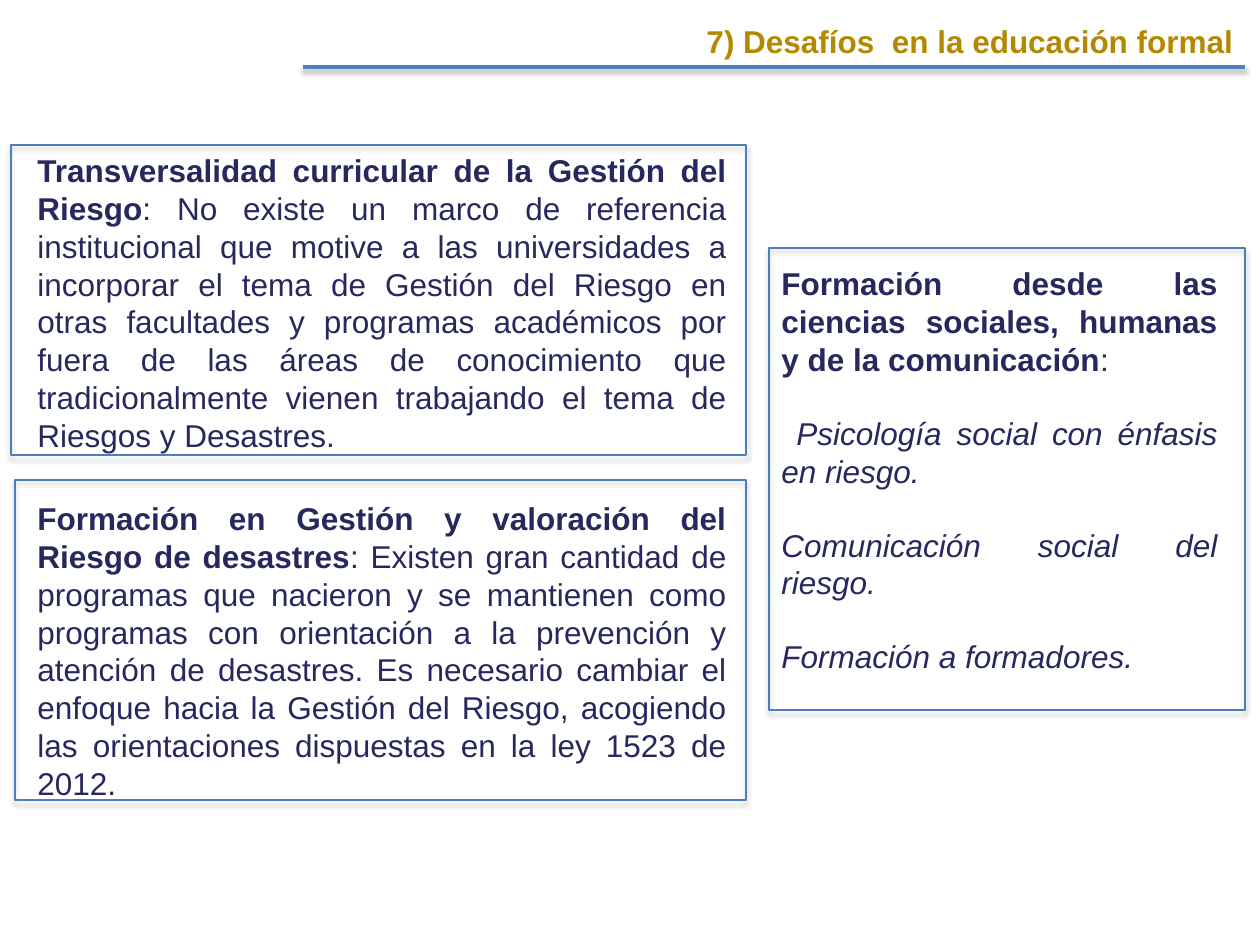
import pptx
import pptx.util
import pptx.dml.color
import pptx.enum.shapes
import pptx.enum.text
import pptx.oxml.ns
from lxml import etree

RGBColor = pptx.dml.color.RGBColor
ALIGN = pptx.enum.text.PP_ALIGN
GOLD = RGBColor(0xB4, 0x89, 0x00)
NAVY = RGBColor(0x27, 0x28, 0x5D)
FRAME_BLUE = RGBColor(0x4B, 0x7E, 0xBC)
RULE_BLUE = RGBColor(0x4F, 0x81, 0xBD)
EMU_PER_PX = 914400 / 126


def px(n):
    return pptx.util.Emu(round(n * EMU_PER_PX))


class SlideBuilder:
    font = "Arial"
    size = pptx.util.Pt(18)
    line_gap = pptx.util.Pt(20.7)  # one line of text

    def __init__(self, slide):
        self.slide = slide

    def format_run(self, r, color, bold=False, italic=False):
        r.font.name, r.font.size = self.font, self.size
        r.font.color.rgb = color
        r.font.bold, r.font.italic = bold, italic

    def add_shadow(self, sp, blur, dist, alpha):
        effects = etree.SubElement(sp._element.spPr, pptx.oxml.ns.qn("a:effectLst"))
        shadow = etree.SubElement(
            effects, pptx.oxml.ns.qn("a:outerShdw"),
            blurRad=str(pptx.util.Pt(blur)), dist=str(pptx.util.Pt(dist)),
            dir="5400000", rotWithShape="0")
        black = etree.SubElement(shadow, pptx.oxml.ns.qn("a:srgbClr"), val="000000")
        etree.SubElement(black, pptx.oxml.ns.qn("a:alpha"), val=str(alpha * 1000))

    def title(self, text, x, y, w, h):
        sp = self.slide.shapes.title
        sp.left, sp.top, sp.width, sp.height = px(x), px(y), px(w), px(h)
        tf = sp.text_frame
        tf.text = text
        tf.auto_size = pptx.enum.text.MSO_AUTO_SIZE.SHAPE_TO_FIT_TEXT
        tf.vertical_anchor = pptx.enum.text.MSO_ANCHOR.TOP
        p = tf.paragraphs[0]
        p.alignment = ALIGN.RIGHT
        self.format_run(p.runs[0], GOLD, bold=True)

    def text(self, heading, body, x, y, w, h, items=()):
        sp = self.slide.shapes.add_textbox(px(x), px(y), px(w), px(h))
        tf = sp.text_frame
        tf.word_wrap = True
        tf.auto_size = pptx.enum.text.MSO_AUTO_SIZE.SHAPE_TO_FIT_TEXT
        p = tf.paragraphs[0]
        p.text = heading
        p.alignment = ALIGN.JUSTIFY
        self.format_run(p.runs[0], NAVY, bold=True)
        r = p.add_run()
        r.text = body
        self.format_run(r, NAVY)
        for item, indent in items:
            p = tf.add_paragraph()
            p.text = item
            p.alignment = ALIGN.JUSTIFY
            p.space_before = self.line_gap
            if indent:
                p._p.get_or_add_pPr().set("indent", str(px(indent)))
            self.format_run(p.runs[0], NAVY, italic=True)

    def frame(self, x, y, w, h):
        sp = self.slide.shapes.add_shape(
            pptx.enum.shapes.MSO_SHAPE.RECTANGLE, px(x), px(y), px(w), px(h))
        sp.fill.background()
        sp.line.color.rgb = FRAME_BLUE
        sp.line.width = pptx.util.Pt(0.75)
        self.add_shadow(sp, 3.1, 1.8, 35)

    def rule(self, x1, x2, y):
        line = self.slide.shapes.add_connector(
            pptx.enum.shapes.MSO_CONNECTOR.STRAIGHT, px(x1), px(y), px(x2), px(y))
        line.line.color.rgb = RULE_BLUE
        line.line.width = pptx.util.Pt(2)
        self.add_shadow(line, 3.1, 1.6, 38)


def main():
    prs = pptx.Presentation()
    prs.slide_width, prs.slide_height = px(1260), px(945)
    b = SlideBuilder(prs.slides.add_slide(prs.slide_layouts[5]))

    # Heading
    b.title("7) Desafíos  en la educación formal", 471, 16, 775, 50)

    # Left column: curriculum and training
    b.text("Transversalidad curricular de la Gestión del Riesgo",
           ": No existe un marco de referencia institucional que motive a las "
           "universidades a incorporar el tema de Gestión del Riesgo en otras "
           "facultades y programas académicos por fuera de las áreas de "
           "conocimiento que tradicionalmente vienen trabajando el tema de "
           "Riesgos y Desastres.", 25, 145, 714, 318)
    b.frame(11, 145, 735, 310)
    b.text("Formación en Gestión y valoración del Riesgo de desastres",
           ": Existen gran cantidad de programas que nacieron y se mantienen "
           "como programas con orientación a la prevención y atención de "
           "desastres. Es necesario cambiar el enfoque hacia la Gestión del "
           "Riesgo, acogiendo las orientaciones dispuestas en la ley 1523 de "
           "2012.", 25, 493, 714, 318)
    b.frame(15, 480, 731, 320)

    # Right column: social sciences
    b.text("Formación desde las ciencias sociales, humanas y de la comunicación",
           ":", 769, 258, 461, 432,
           items=[("Psicología social con énfasis en riesgo.", 15),
                  ("Comunicación social del riesgo.", 0),
                  ("Formación a formadores.", 0)])
    b.frame(769, 248, 476, 462)

    # Rule under the heading
    b.rule(1245, 303, 67)

    prs.save("out.pptx")


if __name__ == "__main__":
    main()
